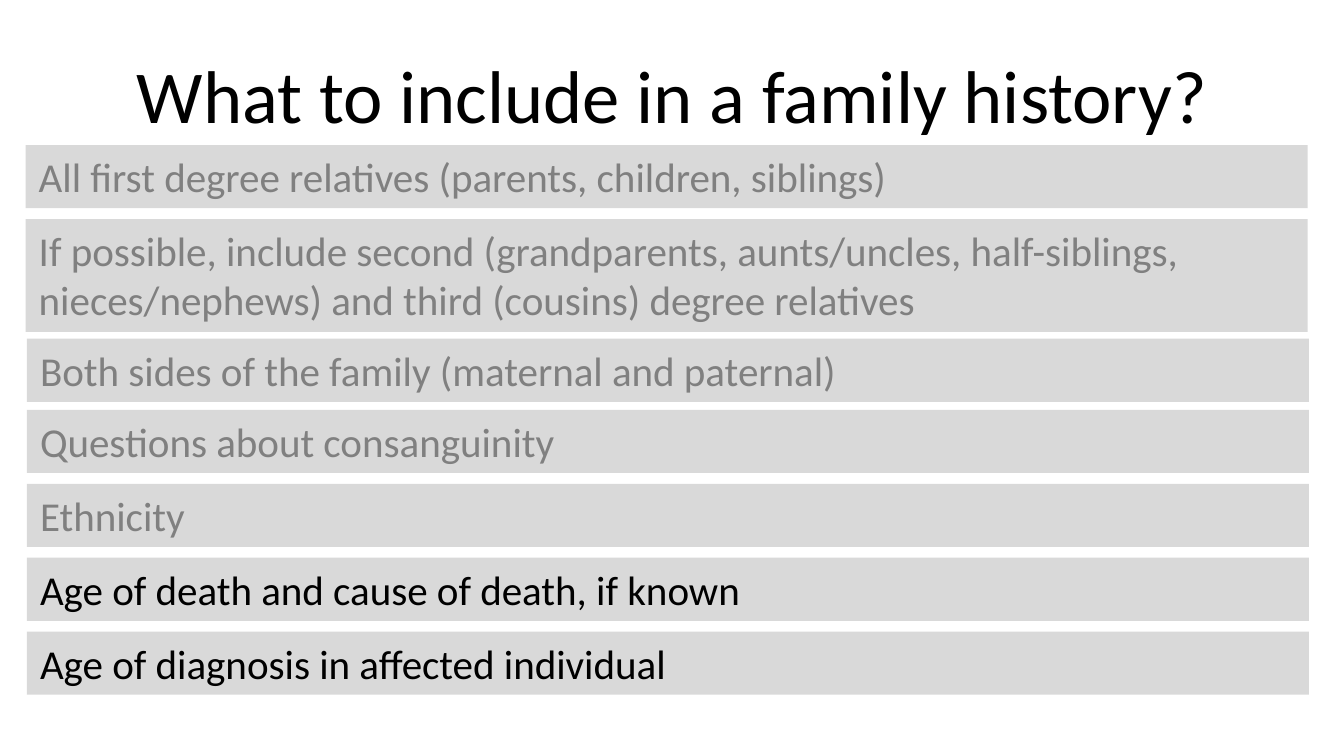
from pptx import Presentation
from pptx.dml.color import RGBColor
from pptx.enum.text import MSO_ANCHOR, PP_ALIGN
from pptx.util import Inches, Pt

BLACK = RGBColor(0x00, 0x00, 0x00)
GRAY = RGBColor(0x80, 0x80, 0x80)
BAR_FILL = RGBColor(0xD9, 0xD9, 0xD9)
LEFT, CENTER = PP_ALIGN.LEFT, PP_ALIGN.CENTER
TOP, MIDDLE = MSO_ANCHOR.TOP, MSO_ANCHOR.MIDDLE

# Content: topic, left and top of its bar, number of lines, text colour
TITLE = "What to include in a family history?"
TOPICS = [
    ("All first degree relatives (parents, children, siblings)", 0.19, 1.08, 1, GRAY),
    ("If possible, include second (grandparents, aunts/uncles, half-siblings, "
     "nieces/nephews) and third (cousins) degree relatives", 0.19, 1.63, 2, GRAY),
    ("Both sides of the family (maternal and paternal)", 0.2, 2.52, 1, GRAY),
    ("Questions about consanguinity", 0.2, 3.05, 1, GRAY),
    ("Ethnicity", 0.2, 3.6, 1, GRAY),
    ("Age of death and cause of death, if known", 0.2, 4.15, 1, BLACK),
    ("Age of diagnosis in affected individual", 0.2, 4.7, 1, BLACK),
]

# Layout
BAR_WIDTH = 9.54
LINE_HEIGHT, BAR_PADDING = 0.37, 0.1


def add_text(slide, text, box, size, color, alignment=LEFT, anchor=TOP):
    shape = slide.shapes.add_textbox(*(Inches(length) for length in box))
    frame = shape.text_frame
    frame.word_wrap = True
    frame.vertical_anchor = anchor
    paragraph = frame.paragraphs[0]
    paragraph.text = text
    paragraph.alignment = alignment
    font = paragraph.runs[0].font
    for name, value in {"name": "Calibri", "size": Pt(size)}.items():
        setattr(font, name, value)
    font.color.rgb = color
    return shape


def main():
    # Widescreen slide, 16:9
    presentation = Presentation()
    presentation.slide_width = Inches(10)
    presentation.slide_height = Inches(10 * 9 / 16)
    slide = presentation.slides.add_slide(presentation.slide_layouts[6])

    # Title
    add_text(slide, TITLE, (0.5, 0.23, 9, 0.94), 40, BLACK, CENTER, MIDDLE)

    # Topic bars
    for text, left, top, lines, color in TOPICS:
        height = BAR_PADDING + lines * LINE_HEIGHT
        bar = add_text(slide, text, (left, top, BAR_WIDTH, height), 22, color)
        bar.fill.solid()
        bar.fill.fore_color.rgb = BAR_FILL

    presentation.save("out.pptx")


if __name__ == "__main__":
    main()
